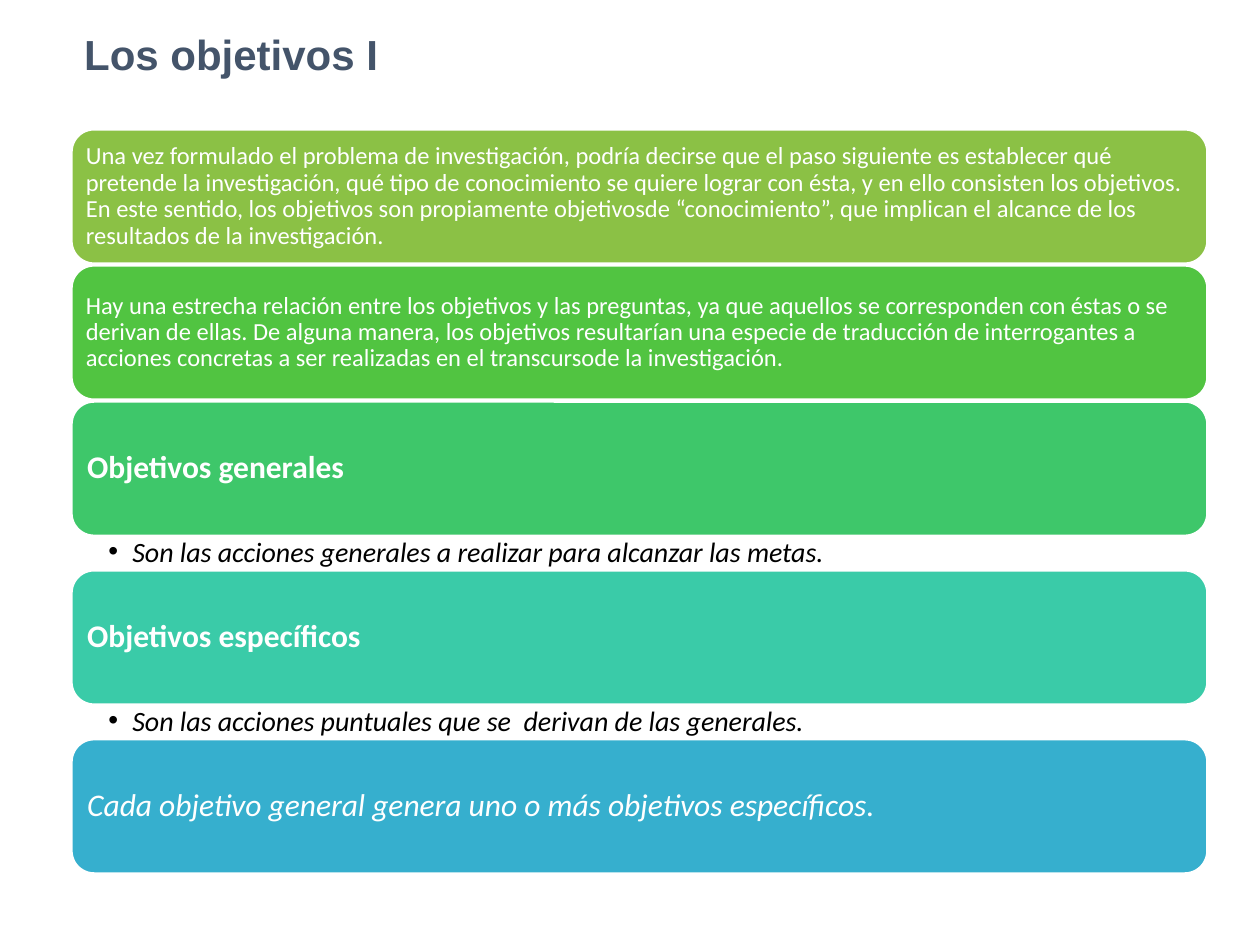
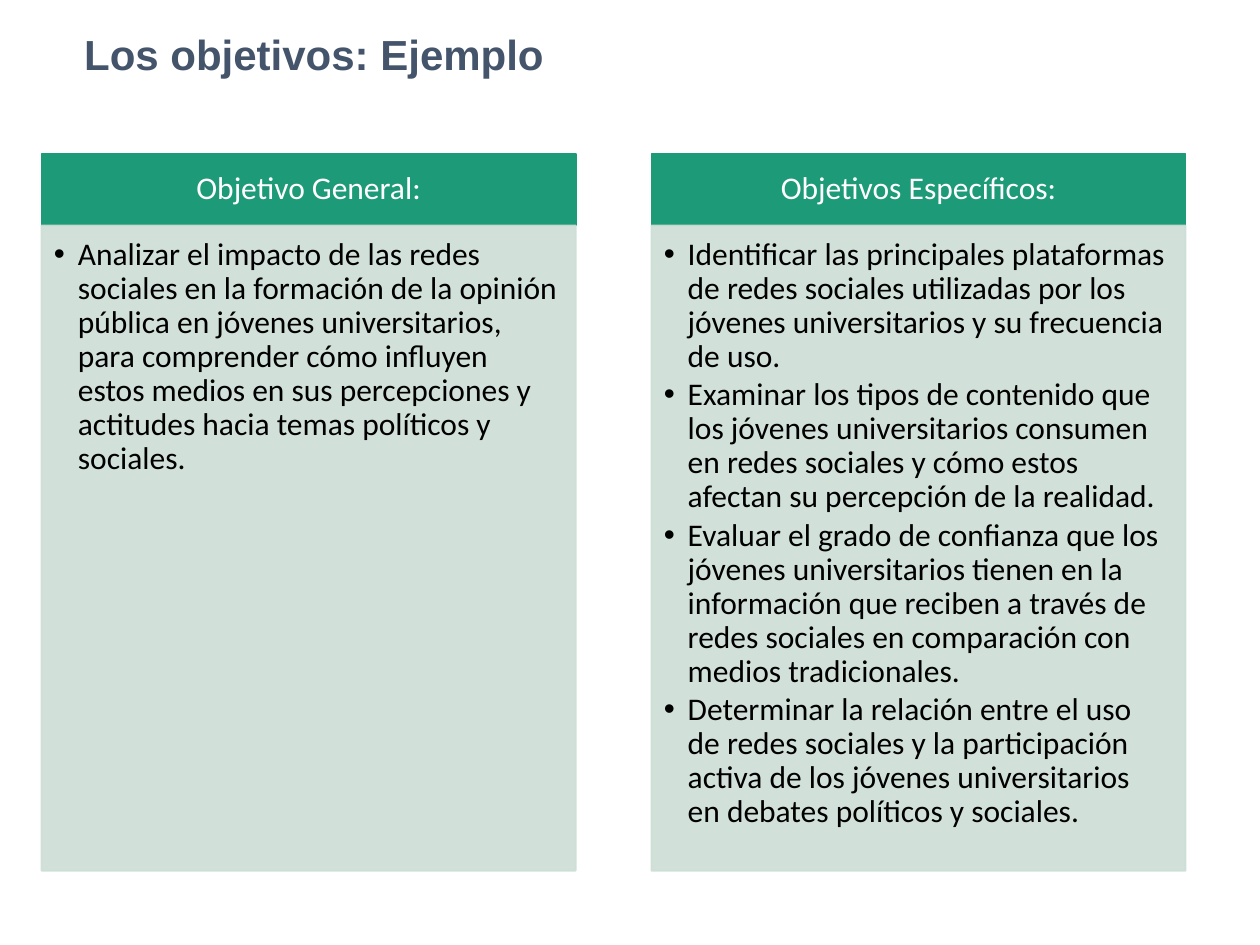
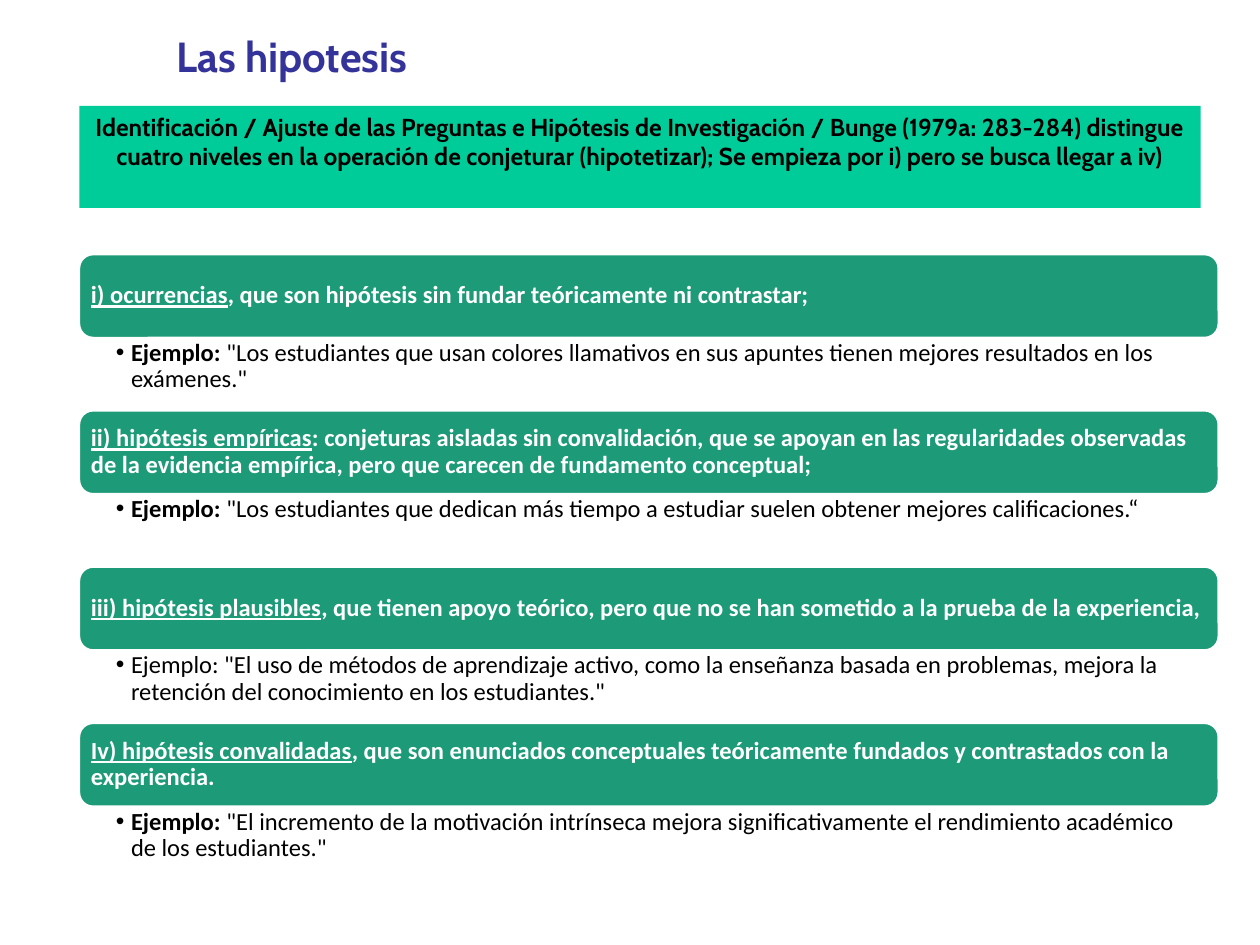
from lxml.etree import SubElement
from pptx import Presentation
from pptx.dml.color import RGBColor as RGB
from pptx.enum.shapes import MSO_SHAPE as SHAPE
from pptx.enum.text import MSO_ANCHOR as ANCHOR, PP_ALIGN as ALIGN
from pptx.oxml.ns import qn
from pptx.util import Inches, Pt

THEME = {
    "white": "FFFFFF", "black": "000000", "slate": "44546A", "indigo": "333399",
    "teal": "1D9A78", "mint": "00CC99", "sage": "CDDED6",
    "steps": ["8BC145", "51C441", "3EC76A", "3ACBA8", "36AFCE"],
    "small": Pt(14), "medium": Pt(16), "large": Pt(18), "title": Pt(24),
    "body_font": "Calibri", "title_font": "Arial", "accent_font": "Cabin",
}
BODY = {"name": THEME["body_font"], "size": THEME["small"]}
LARGE = BODY | {"size": THEME["large"]}
TITLE = {"name": THEME["title_font"], "size": THEME["title"], "bold": True}
ACCENT = {"name": THEME["accent_font"], "bold": True}
TIGHT = {"line_spacing": 0.9}
DEFAULT_INSETS = (0.1, 0.05, 0.1, 0.05)


def add_panel(slide, kind, box, fill, line=None, opacity=None):
    panel = slide.shapes.add_shape(kind, *map(Inches, box))
    panel.shadow.inherit = False
    panel.fill.solid()
    panel.fill.fore_color.rgb = RGB.from_string(fill)
    if line:
        panel.line.color.rgb = RGB.from_string(line)
        panel.line.width = Pt(1)
    else:
        panel.line.fill.background()
    if opacity:
        for color in panel._element.spPr.iter(qn("a:srgbClr")):
            SubElement(color, qn("a:alpha"), val=str(opacity * 1000))
    return panel


def write(holder, paragraphs, font, color, insets=DEFAULT_INSETS,
          anchor=ANCHOR.TOP, layout=TIGHT, bullet=None):
    frame = holder.text_frame
    sides = ("margin_left", "margin_top", "margin_right", "margin_bottom")
    frame_format = dict(zip(sides, map(Inches, insets)))
    frame_format |= {"word_wrap": True, "vertical_anchor": anchor}
    for key, value in frame_format.items():
        setattr(frame, key, value)
    for index, runs in enumerate(paragraphs):
        paragraph = frame.paragraphs[0] if index == 0 else frame.add_paragraph()
        for key, value in ({"alignment": ALIGN.LEFT} | layout).items():
            setattr(paragraph, key, value)
        if bullet:
            properties = paragraph._p.get_or_add_pPr()
            properties.set("marL", str(Inches(bullet)))
            properties.set("indent", str(-Inches(bullet)))
            SubElement(properties, qn("a:buFont"), typeface="Arial")
            SubElement(properties, qn("a:buChar"), char="•")
        for text, emphasis in runs:
            run = paragraph.add_run()
            run.text = text
            run.font.color.rgb = RGB.from_string(color)
            for key, value in (font | emphasis).items():
                setattr(run.font, key, value)


deck = Presentation()
deck.slide_width, deck.slide_height = Inches(10), Inches(7.5)
titles = [
    ("Los objetivos I", (0.57, 0.18, 6.5, 0.5), TITLE, THEME["slate"]),
    ("Los objetivos: Ejemplo", (0.57, 0.18, 6.5, 0.5), TITLE, THEME["slate"]),
    ("Las hipotesis", (1.3, 0.19, 8.54, 0.5), TITLE | ACCENT, THEME["indigo"]),
]
slides = []
for heading, box, font, color in titles:
    slide = deck.slides.add_slide(deck.slide_layouts[6])
    write(slide.shapes.add_textbox(*map(Inches, box)), [[(heading, {})]], font, color, layout={})
    slides.append(slide)
objectives, example, hypotheses = slides

steps = [
    ("Una vez formulado el problema de investigación, podría decirse que el paso siguiente es "
     "establecer qué pretende la investigación, qué tipo de conocimiento se quiere lograr con ésta, "
     "y en ello consisten los objetivos. En este sentido, los objetivos son propiamente objetivosde "
     "“conocimiento”, que implican el alcance de los resultados de la investigación.",
     BODY, 0.06, None),
    ("Hay una estrecha relación entre los objetivos y las preguntas, ya que aquellos se corresponden "
     "con éstas o se derivan de ellas. De alguna manera, los objetivos resultarían una especie de "
     "traducción de interrogantes a acciones concretas a ser realizadas en el transcursode la "
     "investigación.", BODY, 0.06, None),
    ("Objetivos generales", LARGE | {"bold": True}, 0.07,
     "Son las acciones generales a realizar para alcanzar las metas."),
    ("Objetivos específicos", LARGE | {"bold": True}, 0.07,
     "Son las acciones puntuales que se  derivan de las generales."),
    ("Cada objetivo general genera uno o más objetivos específicos.",
     LARGE | {"italic": True}, 0.07, None),
]
left, top, width = 0.57, 1.03, 9.01
step_height, note_height, step_gap = 1.06, 0.28, 0.02
for (statement, font, inset, note), fill in zip(steps, THEME["steps"]):
    step = add_panel(objectives, SHAPE.ROUNDED_RECTANGLE, (left, top, width, step_height),
                     fill, THEME["white"])
    write(step, [[(statement, {})]], font, THEME["white"], (inset,) * 4, ANCHOR.MIDDLE)
    top += step_height
    if note:
        note_box = objectives.shapes.add_textbox(*map(Inches, (left, top, width, note_height)))
        write(note_box, [[(note, {})]], BODY | {"size": THEME["medium"], "italic": True},
              THEME["black"], (0.29, 0.02, 0.12, 0.02), bullet=0.19)
        top += note_height
    else:
        top += step_gap

columns = [
    ("Objetivo General:", [
        "Analizar el impacto de las redes sociales en la formación de la opinión pública en jóvenes "
        "universitarios, para comprender cómo influyen estos medios en sus percepciones y actitudes "
        "hacia temas políticos y sociales.",
    ]),
    ("Objetivos Específicos:", [
        "Identificar las principales plataformas de redes sociales utilizadas por los jóvenes "
        "universitarios y su frecuencia de uso.",
        "Examinar los tipos de contenido que los jóvenes universitarios consumen en redes sociales "
        "y cómo estos afectan su percepción de la realidad.",
        "Evaluar el grado de confianza que los jóvenes universitarios tienen en la información que "
        "reciben a través de redes sociales en comparación con medios tradicionales.",
        "Determinar la relación entre el uso de redes sociales y la participación activa de los "
        "jóvenes universitarios en debates políticos y sociales.",
    ]),
]
column_width, column_pitch = 4.24, 4.84
header_top, header_height, goals_height = 1.22, 0.57, 5.12
for index, (header, goals) in enumerate(columns):
    left = 0.33 + index * column_pitch
    header_band = add_panel(example, SHAPE.RECTANGLE, (left, header_top, column_width, header_height),
                            THEME["teal"], THEME["teal"])
    write(header_band, [[(header, {})]], LARGE, THEME["white"], (0.14, 0.08, 0.14, 0.08),
          ANCHOR.MIDDLE, TIGHT | {"alignment": ALIGN.CENTER})
    goals_panel = add_panel(example, SHAPE.RECTANGLE,
                            (left, header_top + header_height, column_width, goals_height),
                            THEME["sage"], THEME["sage"], opacity=90)
    write(goals_panel, [[(goal, {})] for goal in goals], LARGE, THEME["black"],
          (0.1, 0.1, 0.14, 0.16), layout=TIGHT | {"space_after": Pt(2.5)}, bullet=0.19)

intro = add_panel(hypotheses, SHAPE.RECTANGLE, (0.63, 0.84, 8.9, 0.81), THEME["mint"])
write(intro, [[(
    "Identificación / Ajuste de las Preguntas e Hipótesis de Investigación / Bunge (1979a: 283-284) "
    "distingue cuatro niveles en la operación de conjeturar (hipotetizar); Se empieza por i) pero se "
    "busca llegar a iv)", {})]], BODY | ACCENT, THEME["black"], layout={"alignment": ALIGN.CENTER})

levels = [
    ("i) ocurrencias", ", que son hipótesis sin fundar teóricamente ni contrastar;",
     "Ejemplo:", " \"Los estudiantes que usan colores llamativos en sus apuntes tienen mejores "
     "resultados en los exámenes.\""),
    ("ii) hipótesis empíricas", ": conjeturas aisladas sin convalidación, que se apoyan en las "
     "regularidades observadas de la evidencia empírica, pero que carecen de fundamento conceptual;",
     "Ejemplo: ", "\"Los estudiantes que dedican más tiempo a estudiar suelen obtener mejores "
     "calificaciones.“"),
    ("iii) hipótesis plausibles", ", que tienen apoyo teórico, pero que no se han sometido a la "
     "prueba de la experiencia,",
     "", "Ejemplo: \"El uso de métodos de aprendizaje activo, como la enseñanza basada en problemas, "
     "mejora la retención del conocimiento en los estudiantes.\""),
    ("Iv) hipótesis convalidadas", ", que son enunciados conceptuales teóricamente fundados y "
     "contrastados con la experiencia.",
     "Ejemplo:", " \"El incremento de la motivación intrínseca mejora significativamente el "
     "rendimiento académico de los estudiantes.\""),
]
left, width, level_height, case_height = 0.63, 9.04, 0.66, 0.58
for index, (term, meaning, label, case) in enumerate(levels):
    top = 2.02 + index * (level_height + case_height)
    level = add_panel(hypotheses, SHAPE.ROUNDED_RECTANGLE, (left, top, width, level_height),
                      THEME["teal"], THEME["white"])
    write(level, [[(term, {"underline": True}), (meaning, {})]], BODY | {"bold": True},
          THEME["white"], (0.06,) * 4, ANCHOR.MIDDLE)
    case_box = hypotheses.shapes.add_textbox(
        *map(Inches, (left, top + level_height, width, case_height)))
    case_runs = [(label, {"bold": True})] if label else []
    write(case_box, [case_runs + [(case, {})]], BODY, THEME["black"],
          (0.29, 0.02, 0.11, 0.02), bullet=0.12)

deck.save("out.pptx")
